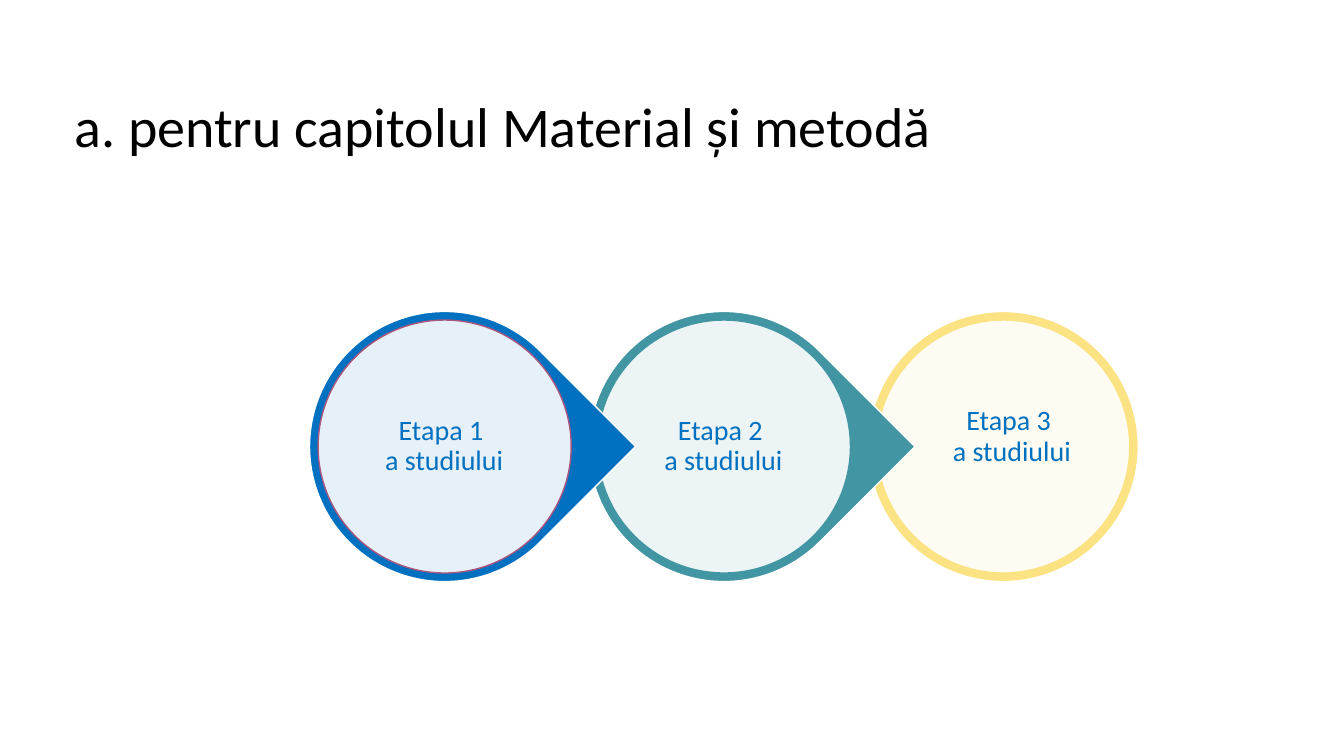
from lxml import etree
from pptx import Presentation
from pptx.dml.color import RGBColor
from pptx.enum.shapes import MSO_SHAPE as Shape
from pptx.enum.text import MSO_ANCHOR as Anchor, PP_ALIGN as Align
from pptx.oxml.ns import qn
from pptx.util import Inches, Pt

FONT = "Calibri"
BLUE = "0070C0"
RING_SIZE = 2.68
DISC_SIZE = 2.51
LABEL_SIZE = 1.79
FIRST_CENTER = 4.41
STEP = 2.77
CENTER_Y = 4.43

# label, ring colour, disc outline, label left, label top
STAGES = [
    ("Etapa 1 \na studiului", BLUE, "AA567F", 3.51, 3.53),
    ("Etapa 2 \na studiului", "4295A2", "4295A2", 6.28, 3.53),
    ("Etapa 3 \na studiului", "FBE283", "FBE283", 9.14, 3.44),
]


def rgb(value):
    return RGBColor.from_string(value)


def format_text(frame, size, color, align):
    for paragraph in frame.paragraphs:
        paragraph.alignment = align
        paragraph.line_spacing = 0.9
        for run in paragraph.runs:
            run.font.name = FONT
            run.font.size = Pt(size)
            run.font.color.rgb = rgb(color)


def add_title(slide, text):
    title = slide.shapes.title
    title.left, title.top = Inches(0.64), Inches(0.84)
    title.width, title.height = Inches(11.5), Inches(0.79)
    title.text_frame.text = text
    title.text_frame.vertical_anchor = Anchor.BOTTOM
    format_text(title.text_frame, 40, "000000", Align.LEFT)


def add_round(slide, preset, center_x, size, fill, line):
    shape = slide.shapes.add_shape(
        preset, Inches(center_x - size / 2), Inches(CENTER_Y - size / 2),
        Inches(size), Inches(size))
    shape.shadow.inherit = False
    shape.fill.solid()
    shape.fill.fore_color.rgb = rgb(fill)
    shape.line.color.rgb = rgb(line)
    shape.line.width = Pt(1)
    return shape


def set_opacity(shape, percent):
    color = shape.fill._xPr.find(qn("a:solidFill"))[0]
    etree.SubElement(color, qn("a:alpha"), val=str(percent * 1000))


def add_stage(slide, center_x, ring_color, outline, pointed):
    # Ring, drawn out to a point when another stage follows
    preset = Shape.TEAR if pointed else Shape.OVAL
    ring = add_round(slide, preset, center_x, RING_SIZE, ring_color, "FFFFFF")
    if pointed:
        ring.adjustments[0] = 1
        ring.rotation = 45
    # Pale disc
    disc = add_round(slide, Shape.OVAL, center_x, DISC_SIZE, "FFFFFF", outline)
    set_opacity(disc, 90)


def add_label(slide, text, left, top):
    label = slide.shapes.add_textbox(
        Inches(left), Inches(top), Inches(LABEL_SIZE), Inches(LABEL_SIZE))
    frame = label.text_frame
    frame.word_wrap = True
    frame.vertical_anchor = Anchor.MIDDLE
    frame.margin_left = frame.margin_right = Inches(0.07)
    frame.margin_top = frame.margin_bottom = Inches(0.07)
    frame.text = text
    format_text(frame, 20, BLUE, Align.CENTER)


def main():
    prs = Presentation()
    prs.slide_width, prs.slide_height = Inches(13.33), Inches(7.5)
    slide = prs.slides.add_slide(prs.slide_layouts[5])
    add_title(slide, "a. pentru capitolul Material și metodă")

    # Stages from last to first, so each point overlaps the next ring
    last = len(STAGES) - 1
    for index in range(last, -1, -1):
        _, ring_color, outline, _, _ = STAGES[index]
        add_stage(slide, FIRST_CENTER + index * STEP, ring_color, outline,
                  pointed=index < last)

    # Labels on top
    for text, _, _, left, top in STAGES:
        add_label(slide, text, left, top)

    prs.save("out.pptx")


if __name__ == "__main__":
    main()
